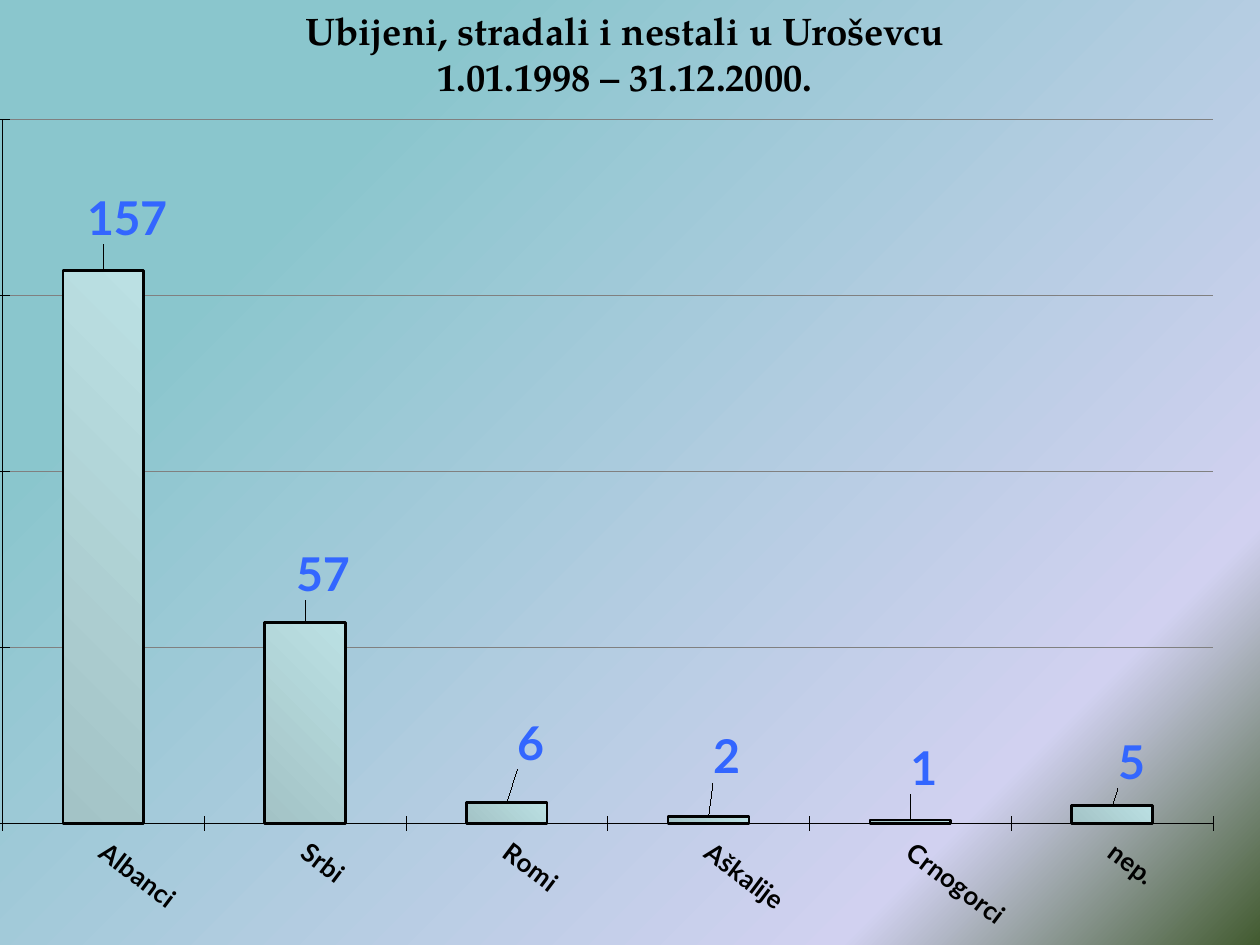
import pptx
import pptx.chart.data
import pptx.dml.color
import pptx.enum.chart
import pptx.enum.text
import pptx.oxml
import pptx.util
from pptx.oxml.ns import nsdecls, qn

Pt = pptx.util.Pt

# Content
TITLE = "Ubijeni, stradali i nestali u Uroševcu\v1.01.1998 – 31.12.2000."
# category, victims, label shift right and up as fractions of the chart
VICTIMS = [
    ("Albanci", 157, 0.016, 0.023),
    ("Srbi", 57, 0.012, 0.019),
    ("Romi", 6, 0.016, 0.03),
    ("Aškalije", 2, 0.012, 0.031),
    ("Crnogorci", 1, 0.009, 0.022),
    ("nep.", 5, 0.013, 0.013),
]
# stops: position in percent, colour, opacity in percent
BACKGROUND = [(22, "8AC6CD", 100), (81, "D1D1F0", 91), (100, "425B30", 100)]
BARS = [(0, "A3C3C6", 100), (100, "BBE0E3", 100)]
PLOT_AREA = {"x": 0.051, "y": 0.016, "w": 0.817, "h": 0.771}


def color(value):
    return pptx.dml.color.RGBColor.from_string(value)


def set_font(font, name, size, value, bold):
    font.name, font.size, font.bold = name, Pt(size), bold
    font.color.rgb = color(value)


def set_line(line, value, width):
    line.color.rgb = color(value)
    line.width = Pt(width)


def set_gradient(fill, properties, stops, angle):
    """Fill with a linear gradient, angle in degrees clockwise."""
    fill.gradient()
    stop_xml = "".join(
        f'<a:gs pos="{position * 1000}"><a:srgbClr val="{value}">'
        f'<a:alpha val="{opacity * 1000}"/></a:srgbClr></a:gs>'
        for position, value, opacity in stops)
    gradient = pptx.oxml.parse_xml(
        f'<a:gradFill {nsdecls("a")} rotWithShape="1"><a:gsLst>{stop_xml}</a:gsLst>'
        f'<a:lin ang="{angle * 60000}" scaled="0"/></a:gradFill>')
    current = properties.find(qn("a:gradFill"))
    properties.replace(current, gradient)


def manual_layout(values, modes=""):
    entries = "".join(f'<c:{key} val="{value}"/>' for key, value in values.items())
    return pptx.oxml.parse_xml(
        f'<c:layout {nsdecls("c")}><c:manualLayout>{modes}{entries}'
        "</c:manualLayout></c:layout>")


presentation = pptx.Presentation()
presentation.slide_width, presentation.slide_height = Pt(720), Pt(540)
slide = presentation.slides.add_slide(presentation.slide_layouts[6])

# Background
background_fill = slide.background.fill
background_fill.gradient()
background = slide.element.find(".//" + qn("p:bgPr"))
set_gradient(background_fill, background, BACKGROUND, 45)

# Chart, wider than the slide
chart_data = pptx.chart.data.CategoryChartData(number_format="#,##0")
chart_data.categories = [row[0] for row in VICTIMS]
chart_data.add_series("Series 1", [row[1] for row in VICTIMS])
chart = slide.shapes.add_chart(
    pptx.enum.chart.XL_CHART_TYPE.COLUMN_CLUSTERED,
    Pt(-41.76), Pt(59.76), Pt(846.72), Pt(522), chart_data).chart
chart.has_legend = chart.has_title = False
set_font(chart.font, "Lato", 26.6, "000000", True)

plot_area = chart.element.find(".//" + qn("c:plotArea"))
for layout in plot_area.findall(qn("c:layout")):
    plot_area.remove(layout)
plot_area.insert(0, manual_layout(
    PLOT_AREA,
    '<c:layoutTarget val="inner"/><c:xMode val="edge"/><c:yMode val="edge"/>'))

# Axes
category_axis, value_axis = chart.category_axis, chart.value_axis
for axis, size, bold in ((category_axis, 14.8, True), (value_axis, 13.3, False)):
    axis.major_tick_mark = pptx.enum.chart.XL_TICK_MARK.CROSS
    set_font(axis.tick_labels.font, "Lato", size, "000000", bold)
    set_line(axis.format.line, "000000", 0.37)
label_body = category_axis._element.find(qn("c:txPr")).find(qn("a:bodyPr"))
label_body.set("rot", str(37 * 60000))
label_body.set("vert", "horz")
value_axis.minimum_scale, value_axis.maximum_scale = 0, 200
value_axis.major_unit = 50
value_axis.has_major_gridlines = True
set_line(value_axis.major_gridlines.format.line, "808080", 0.37)

# Bars
plot = chart.plots[0]
plot.gap_width = 150
plot.vary_by_categories = False
series = plot.series[0]
series.format.fill.gradient()
set_gradient(series.format.fill, series._element.find(qn("c:spPr")), BARS, 315)
set_line(series.format.line, "000000", 1.48)

# Value labels, each shifted from the top of its bar
labels = series.data_labels
labels.show_value = True
labels.number_format, labels.number_format_is_linked = "#,##0", False
set_font(labels.font, "Lato", 26.6, "3366FF", True)
for index, (_, _, right, up) in enumerate(VICTIMS):
    label = series.points[index].data_label
    set_font(label.font, "Lato", 26.6, "3366FF", True)
    label.position = pptx.enum.chart.XL_LABEL_POSITION.OUTSIDE_END
    label_element = labels._element.findall(qn("c:dLbl"))[index]
    label_element.insert(1, manual_layout({"x": right, "y": -up}))

# Title
title = slide.shapes.add_textbox(0, 0, Pt(720), Pt(84.24))
text_frame = title.text_frame
text_frame.word_wrap = True
text_frame.vertical_anchor = pptx.enum.text.MSO_ANCHOR.MIDDLE
text_frame.margin_bottom, text_frame.margin_right = Pt(27), Pt(13)
text_frame.text = TITLE
paragraph = text_frame.paragraphs[0]
paragraph.alignment = pptx.enum.text.PP_ALIGN.CENTER
for run in paragraph.runs:
    set_font(run.font, "TeX Gyre Pagella", 22, "000000", True)

presentation.save("out.pptx")
